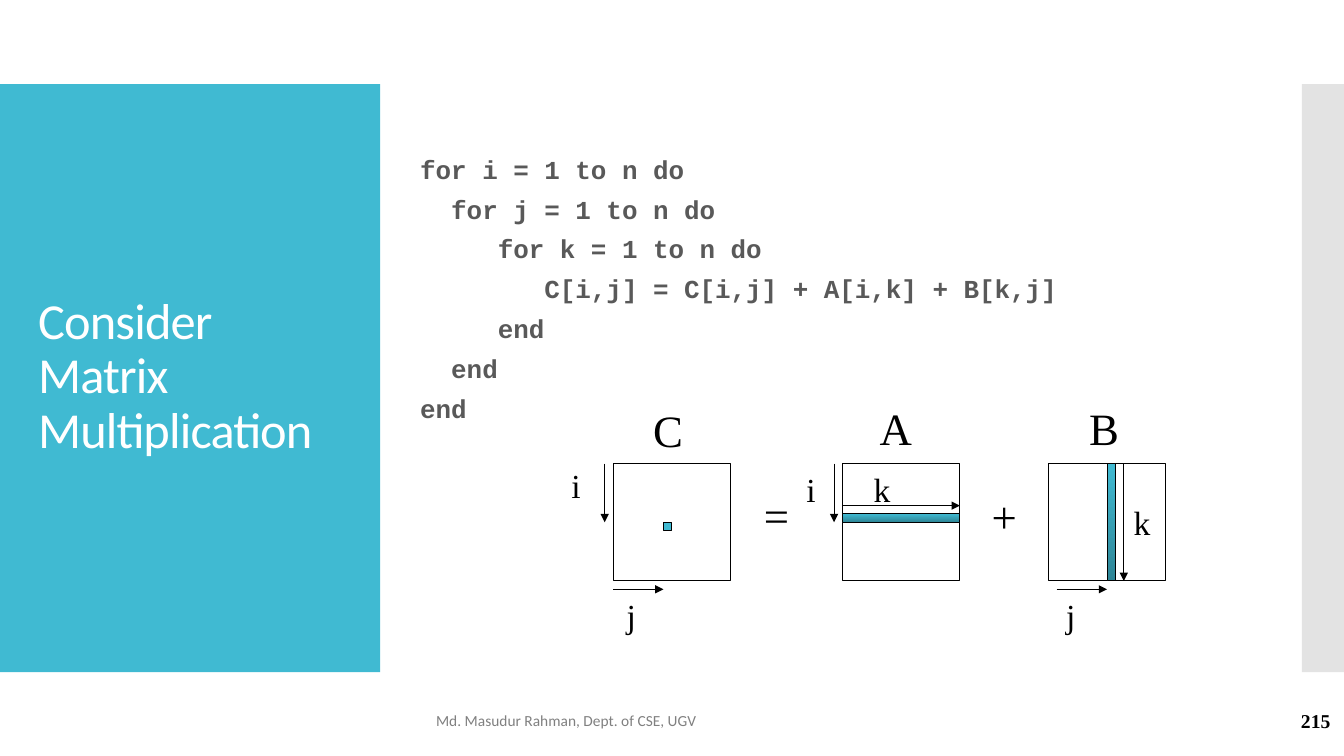
from dataclasses import dataclass

from lxml import etree
from pptx import Presentation
from pptx.dml.color import RGBColor
from pptx.enum.shapes import MSO_CONNECTOR, MSO_SHAPE
from pptx.enum.text import MSO_ANCHOR, MSO_AUTO_SIZE, PP_ALIGN
from pptx.oxml.ns import qn
from pptx.shapes.autoshape import Shape
from pptx.util import Cm, Pt

RECTANGLE = MSO_SHAPE.RECTANGLE
STRAIGHT = MSO_CONNECTOR.STRAIGHT
MIDDLE = MSO_ANCHOR.MIDDLE
TOP = MSO_ANCHOR.TOP
FIT_SHAPE = MSO_AUTO_SIZE.SHAPE_TO_FIT_TEXT
NO_FIT = MSO_AUTO_SIZE.NONE
RIGHT = PP_ALIGN.RIGHT

TEAL = RGBColor(0x40, 0xBA, 0xD2)
DARK_TEAL = RGBColor(0x2E, 0x85, 0x96)
SILVER = RGBColor(0xC8, 0xC8, 0xC8)
CODE_GREY = RGBColor(0x59, 0x59, 0x59)
FOOTER_GREY = RGBColor(0x80, 0x80, 0x80)
BLACK = RGBColor(0, 0, 0)
WHITE = RGBColor(0xFF, 0xFF, 0xFF)

# Matrix diagram measures, in centimetres
SIDE = 2.96
HALF = SIDE / 2
STEP = 0.21
MATRIX_TOP = 11.68
MATRIX_BOTTOM = MATRIX_TOP + SIDE
C_LEFT, A_LEFT, B_LEFT = 15.45, 21.23, 26.42

CODE_LINES = [
    "for i = 1 to n do",
    "  for j = 1 to n do",
    "     for k = 1 to n do",
    "        C[i,j] = C[i,j] + A[i,k] + B[k,j]",
    "     end",
    "  end",
    "end",
]

TITLE_FONT = {"name": "Calibri", "size": Pt(36), "color": WHITE}
CODE_FONT = {"name": "Courier New", "size": Pt(18.5), "bold": True, "color": CODE_GREY}
FOOTER_FONT = {"name": "Calibri", "size": Pt(11), "color": FOOTER_GREY}
NUMBER_FONT = {"name": "Times New Roman", "size": Pt(14), "bold": True, "color": BLACK}
SYMBOL_FONT = {"name": "Times New Roman", "size": Pt(32), "color": BLACK}
INDEX_FONT = {"name": "Times New Roman", "size": Pt(24), "color": BLACK}


@dataclass
class Box:
    left: float
    top: float
    width: float
    height: float
    colors: tuple = ()
    outlined: bool = True


@dataclass
class Arrow:
    left: float
    top: float
    across: float = 0
    down: float = 0


@dataclass
class Label:
    text: str
    left: float
    top: float
    width: float
    font: dict


PANELS = [
    Box(0, 2.12, 9.58, 14.82, (TEAL,), False),
    Box(32.81, 2.12, 1.06, 14.82, (SILVER,), False),
]
MATRICES = [Box(left, MATRIX_TOP, SIDE, SIDE) for left in (C_LEFT, A_LEFT, B_LEFT)]
HIGHLIGHTS = [
    Box(A_LEFT, MATRIX_TOP + HALF - STEP, SIDE, STEP, (TEAL, DARK_TEAL)),
    Box(B_LEFT + HALF, MATRIX_TOP, STEP, SIDE, (TEAL, DARK_TEAL)),
    Box(C_LEFT + HALF - STEP, MATRIX_TOP + HALF, STEP, STEP, (TEAL,)),
]
ARROWS = [
    Arrow(C_LEFT - STEP, MATRIX_TOP, down=HALF),
    Arrow(A_LEFT - STEP, MATRIX_TOP, down=HALF),
    Arrow(C_LEFT, MATRIX_BOTTOM + STEP, across=HALF - STEP),
    Arrow(B_LEFT + STEP, MATRIX_BOTTOM + STEP, across=HALF - STEP),
    Arrow(A_LEFT, MATRIX_TOP + HALF - 2 * STEP, across=SIDE),
    Arrow(B_LEFT + HALF + 2 * STEP, MATRIX_TOP, down=SIDE),
]
LABELS = [
    Label("C", 16.21, 10.03, 1.27, SYMBOL_FONT),
    Label("A", 21.92, 9.98, 1.32, SYMBOL_FONT),
    Label("B", 27.2, 9.98, 1.27, SYMBOL_FONT),
    Label("=", 19, 12.17, 1.14, SYMBOL_FONT),
    Label("+", 24.74, 12.19, 1.14, SYMBOL_FONT),
    Label("i", 14.15, 11.58, 0.74, INDEX_FONT),
    Label("i", 20.07, 11.68, 0.74, INDEX_FONT),
    Label("j", 15.54, 14.86, 0.74, INDEX_FONT),
    Label("j", 26.62, 14.86, 0.74, INDEX_FONT),
    Label("k", 21.77, 11.68, 0.94, INDEX_FONT),
    Label("k", 28.32, 12.52, 0.94, INDEX_FONT),
]


def add_box(slide, box: Box) -> Shape:
    shape = slide.shapes.add_shape(
        RECTANGLE, Cm(box.left), Cm(box.top), Cm(box.width), Cm(box.height))
    shape.shadow.inherit = False
    if len(box.colors) == 2:
        shape.fill.gradient()
        shape.fill.gradient_angle = 270
        for stop, color in zip(shape.fill.gradient_stops, box.colors):
            stop.color.rgb = color
    elif box.colors:
        shape.fill.solid()
        shape.fill.fore_color.rgb = box.colors[0]
    else:
        shape.fill.background()
    if box.outlined:
        shape.line.color.rgb = BLACK
        shape.line.width = Pt(0.75)
    else:
        shape.line.fill.background()
    return shape


def add_arrow(slide, arrow: Arrow) -> None:
    connector = slide.shapes.add_connector(
        STRAIGHT, Cm(arrow.left), Cm(arrow.top),
        Cm(arrow.left + arrow.across), Cm(arrow.top + arrow.down))
    connector.line.color.rgb = BLACK
    connector.line.width = Pt(0.75)
    etree.SubElement(connector.line._get_or_add_ln(), qn("a:tailEnd"), type="triangle")
    etree.SubElement(connector._element.spPr, qn("a:effectLst"))


def add_text(slide, box: Box, lines: list[str], font: dict,
             anchor=MIDDLE, wrap: bool = True, fit=NO_FIT) -> Shape:
    shape = slide.shapes.add_textbox(
        Cm(box.left), Cm(box.top), Cm(box.width), Cm(box.height))
    frame = shape.text_frame
    frame.word_wrap = wrap
    frame.auto_size = fit
    frame.vertical_anchor = anchor
    frame.text = "\n".join(lines)
    for paragraph in frame.paragraphs:
        for run in paragraph.runs:
            for name, value in font.items():
                if name == "color":
                    run.font.color.rgb = value
                else:
                    setattr(run.font, name, value)
    return shape


def main() -> None:
    presentation = Presentation()
    presentation.slide_width = Cm(33.87)
    presentation.slide_height = Cm(19.05)
    slide = presentation.slides.add_slide(presentation.slide_layouts[6])

    # Side panels, the right one half transparent
    side_panels = [add_box(slide, panel) for panel in PANELS]
    silver = side_panels[1].fill._xPr.find(".//" + qn("a:srgbClr"))
    etree.SubElement(silver, qn("a:alpha"), val="50000")

    # Title
    title = add_text(slide, Box(0.71, 3.12, 8.18, 12.78),
                     ["Consider Matrix Multiplication"], TITLE_FONT)
    title_paragraph = title.text_frame.paragraphs[0]
    title_paragraph.line_spacing = 0.9
    title_paragraph.runs[0].font._element.set("spc", "-60")

    # Code
    code = add_text(slide, Box(10.34, 3.86, 21.39, 6.99), CODE_LINES, CODE_FONT)
    for index, paragraph in enumerate(code.text_frame.paragraphs):
        properties = paragraph._p.get_or_add_pPr()
        properties.set("marL", str(Cm(0.5)))
        properties.set("indent", str(-Cm(0.5)))
        paragraph.line_spacing = 0.74
        paragraph.space_before = Pt(12 if index else 0)

    # Matrix diagram
    for box in MATRICES + HIGHLIGHTS:
        add_box(slide, box)
    for arrow in ARROWS:
        add_arrow(slide, arrow)
    for label in LABELS:
        height = 1.6 if label.font is SYMBOL_FONT else 1.27
        add_text(slide, Box(label.left, label.top, label.width, height),
                 [label.text], label.font, TOP, False, FIT_SHAPE)

    # Footer and slide number
    add_text(slide, Box(10.74, 17.65, 16.41, 1.02),
             ["Md. Masudur Rahman, Dept. of CSE, UGV"], FOOTER_FONT)
    number = add_text(slide, Box(29.54, 17.65, 4.24, 1.02), ["215"], NUMBER_FONT)
    number.text_frame.paragraphs[0].alignment = RIGHT

    presentation.save("out.pptx")


if __name__ == "__main__":
    main()
